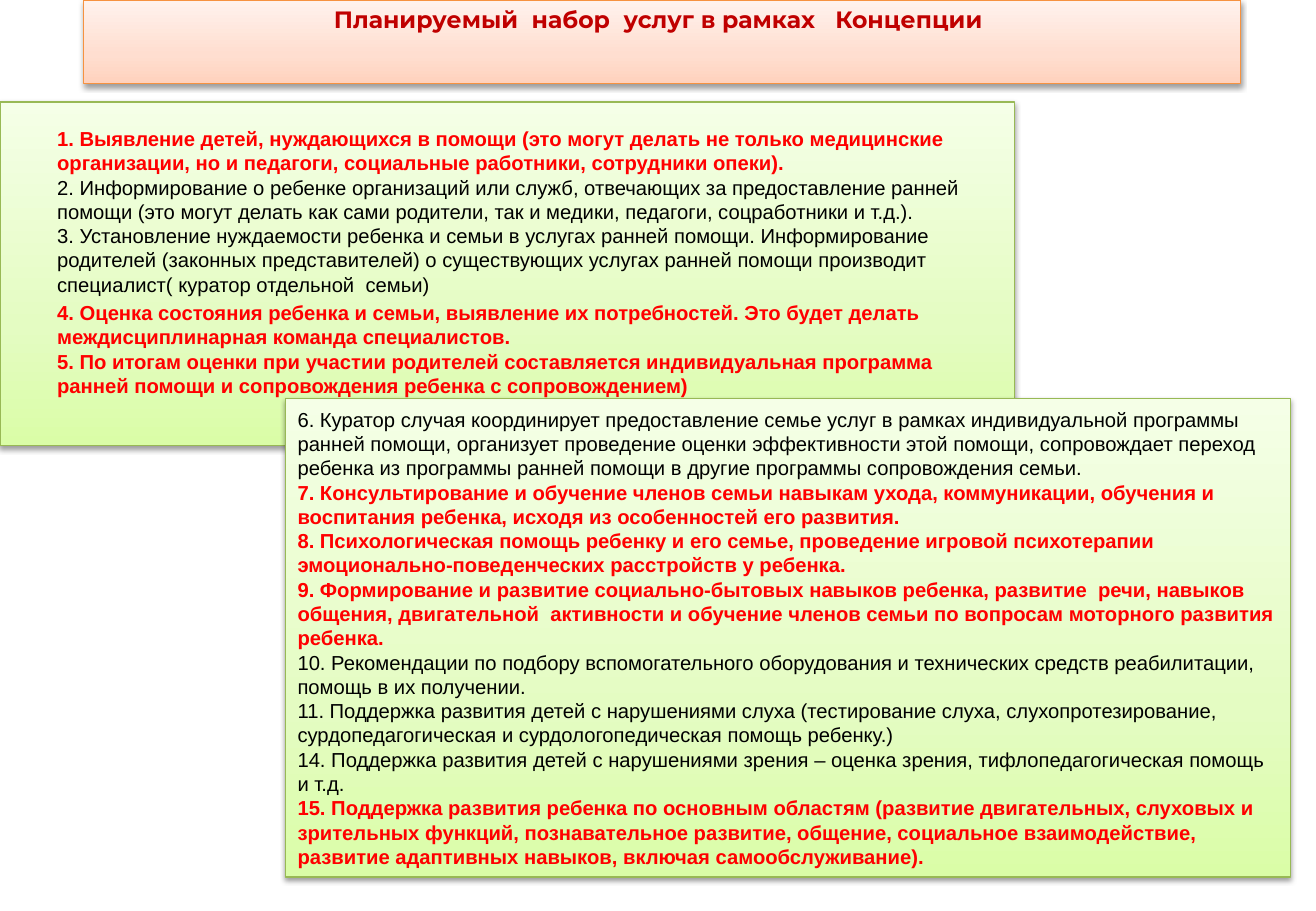
import copy

import pptx
import pptx.dml.color
import pptx.enum.shapes
import pptx.enum.text
import pptx.oxml
import pptx.oxml.ns
import pptx.util

RGBColor = pptx.dml.color.RGBColor
WIDTH = pptx.util.Inches(10.83)
HEIGHT = pptx.util.Inches(7.5)

DARK_RED = RGBColor(0xC0, 0x00, 0x00)
RED = RGBColor(0xFF, 0x00, 0x00)
BLACK = RGBColor(0x00, 0x00, 0x00)
ORANGE_LINE = RGBColor(0xF6, 0x92, 0x40)
GREEN_LINE = RGBColor(0x98, 0xB9, 0x55)
PEACH = [
    (0, RGBColor(0xFF, 0xD2, 0xBD)),
    (35, RGBColor(0xFF, 0xDE, 0xD0)),
    (100, RGBColor(0xFF, 0xF2, 0xED)),
]
GREEN = [
    (0, RGBColor(0xDA, 0xFD, 0xA7)),
    (35, RGBColor(0xE4, 0xFC, 0xC2)),
    (100, RGBColor(0xF5, 0xFF, 0xE7)),
]
SHADOW = (
    '<a:outerShdw xmlns:a="http://schemas.openxmlformats.org/drawingml/2006/main" '
    'blurRad="40000" dist="20000" dir="5400000" rotWithShape="0">'
    '<a:srgbClr val="000000"><a:alpha val="38000"/></a:srgbClr></a:outerShdw>'
)

TITLE_FORMAT = {"name": "Montserrat", "size": pptx.util.Pt(14), "bold": True}
PLAIN = {"name": "Arial", "size": pptx.util.Pt(12), "bold": False}
STRONG = {**PLAIN, "bold": True}
LINE_PITCH = pptx.util.Pt(14.4)

FIRST_SERVICES = [
    (True, "1. Выявление детей, нуждающихся в помощи (это могут делать не только медицинские организации, но и педагоги, социальные работники, сотрудники опеки)."),
    (False, "2. Информирование о ребенке организаций или служб, отвечающих за предоставление ранней помощи (это могут делать как сами родители, так и медики, педагоги, соцработники и т.д.)."),
    (False, "3. Установление нуждаемости ребенка и семьи в услугах ранней помощи. Информирование родителей (законных представителей) о существующих услугах ранней помощи производит специалист( куратор отдельной  семьи)"),
    (True, "4. Оценка состояния ребенка и семьи, выявление их потребностей. Это будет делать междисциплинарная команда специалистов."),
    (True, "5. По итогам оценки при участии родителей составляется индивидуальная программа ранней помощи и сопровождения ребенка с сопровождением)"),
]
NEXT_SERVICES = [
    (False, "6. Куратор случая координирует предоставление семье услуг в рамках индивидуальной программы ранней помощи, организует проведение оценки эффективности этой помощи, сопровождает переход ребенка из программы ранней помощи в другие программы сопровождения семьи."),
    (True, "7. Консультирование и обучение членов семьи навыкам ухода, коммуникации, обучения и воспитания ребенка, исходя из особенностей его развития."),
    (True, "8. Психологическая помощь ребенку и его семье, проведение игровой психотерапии эмоционально-поведенческих расстройств у ребенка."),
    (True, "9. Формирование и развитие социально-бытовых навыков ребенка, развитие  речи, навыков общения, двигательной  активности и обучение членов семьи по вопросам моторного развития ребенка."),
    (False, "10. Рекомендации по подбору вспомогательного оборудования и технических средств реабилитации, помощь в их получении."),
    (False, "11. Поддержка развития детей с нарушениями слуха (тестирование слуха, слухопротезирование, сурдопедагогическая и сурдологопедическая помощь ребенку.)"),
    (False, "14. Поддержка развития детей с нарушениями зрения – оценка зрения, тифлопедагогическая помощь и т.д."),
    (True, "15. Поддержка развития ребенка по основным областям (развитие двигательных, слуховых и зрительных функций, познавательное развитие, общение, социальное взаимодействие, развитие адаптивных навыков, включая самообслуживание)."),
]


def apply_format(target, values):
    for name, value in values.items():
        setattr(target, name, value)


def fill_gradient(shape, stops):
    shape.fill.gradient()
    shape.fill.gradient_angle = 90
    stop_list = shape._element.spPr.find(".//" + pptx.oxml.ns.qn("a:gsLst"))
    stop_list.append(copy.deepcopy(stop_list[-1]))
    for stop, (position, color) in zip(shape.fill.gradient_stops, stops):
        stop.position = position / 100
        stop.color.rgb = color


def add_panel(slide, shares, stops, line_color, frame_format):
    left, top, width, height = (share / 100 for share in shares)
    shape = slide.shapes.add_shape(
        pptx.enum.shapes.MSO_SHAPE.RECTANGLE,
        round(left * WIDTH), round(top * HEIGHT),
        round(width * WIDTH), round(height * HEIGHT),
    )
    fill_gradient(shape, stops)
    shape.line.color.rgb = line_color
    shape.line.width = pptx.util.Pt(0.75)
    shape.shadow.inherit = False
    effects = shape._element.spPr.find(pptx.oxml.ns.qn("a:effectLst"))
    effects.append(pptx.oxml.parse_xml(SHADOW))
    apply_format(shape.text_frame, {"word_wrap": True, **frame_format})
    return shape.text_frame


def write_paragraph(paragraph, text, font_format, color, alignment):
    paragraph.alignment = alignment
    run = paragraph.add_run()
    run.text = text
    apply_format(run.font, font_format)
    run.font.color.rgb = color


def write_services(frame, services):
    for index, (highlighted, text) in enumerate(services):
        paragraph = frame.add_paragraph() if index else frame.paragraphs[0]
        paragraph.line_spacing = LINE_PITCH
        write_paragraph(
            paragraph, text,
            STRONG if highlighted else PLAIN,
            RED if highlighted else BLACK,
            pptx.enum.text.PP_ALIGN.LEFT,
        )


def main():
    presentation = pptx.Presentation()
    apply_format(presentation, {"slide_width": WIDTH, "slide_height": HEIGHT})
    slide = presentation.slides.add_slide(presentation.slide_layouts[6])
    anchors = pptx.enum.text.MSO_ANCHOR

    title = add_panel(slide, (6.37, 0, 87.9, 9.2), PEACH, ORANGE_LINE, {
        "vertical_anchor": anchors.TOP,
        "margin_top": pptx.util.Inches(0.04),
        "margin_right": pptx.util.Inches(0.16),
    })
    write_paragraph(
        title.paragraphs[0], "Планируемый  набор  услуг в рамках   Концепции",
        TITLE_FORMAT, DARK_RED, pptx.enum.text.PP_ALIGN.CENTER,
    )

    first = add_panel(slide, (0, 11.2, 77.1, 37.73), GREEN, GREEN_LINE, {
        "vertical_anchor": anchors.TOP,
        "margin_top": pptx.util.Inches(0.2),
        "margin_left": pptx.util.Inches(0.47),
    })
    write_services(first, FIRST_SERVICES)
    first.paragraphs[0]._p.get_or_add_pPr().set("indent", str(pptx.util.Inches(-0.05)))
    first.paragraphs[3].space_before = pptx.util.Pt(2.4)

    following = add_panel(slide, (21.7, 43.73, 76.36, 52.53), GREEN, GREEN_LINE, {
        "vertical_anchor": anchors.MIDDLE,
    })
    write_services(following, NEXT_SERVICES)

    presentation.save("out.pptx")


if __name__ == "__main__":
    main()
